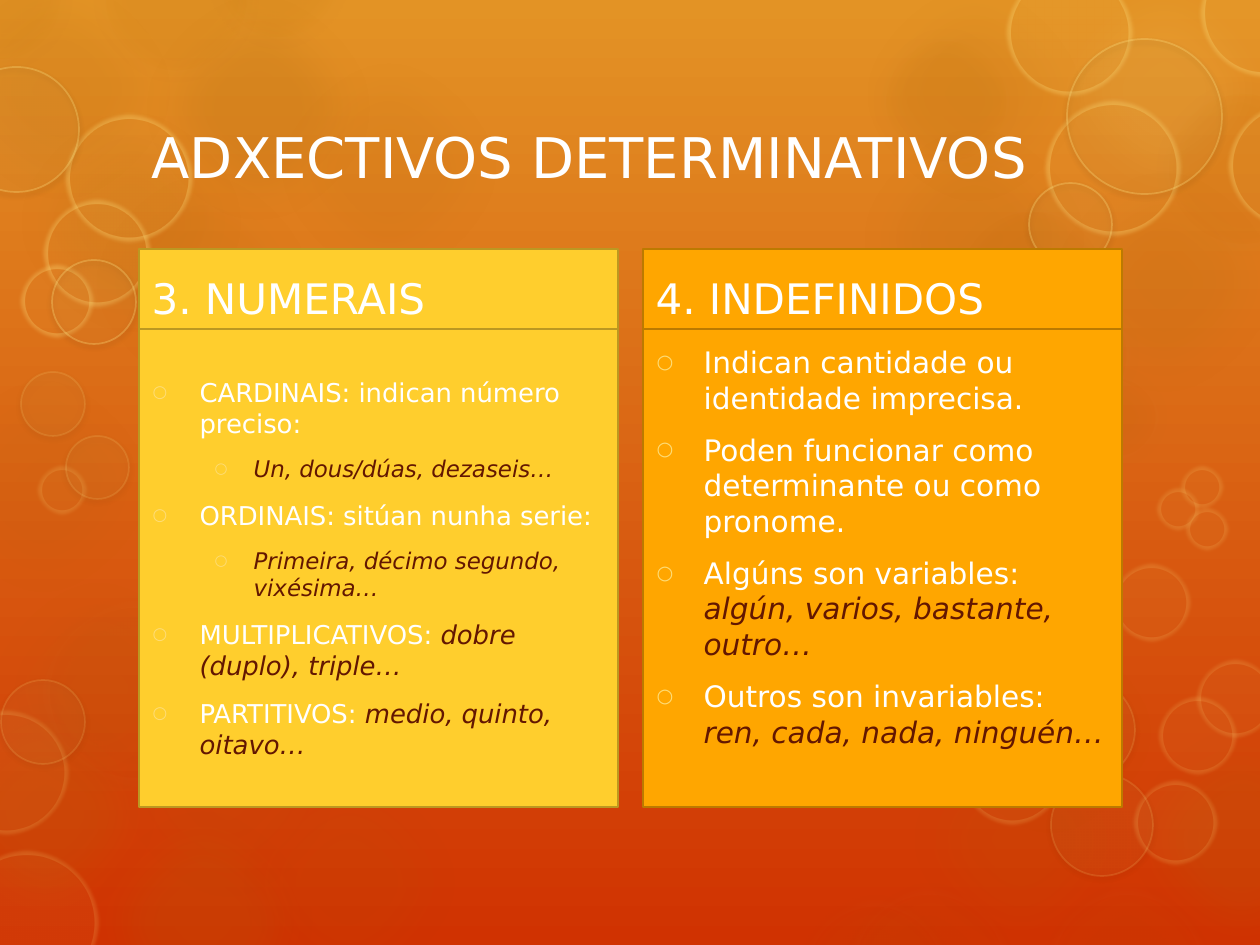
from lxml import etree
from pptx import Presentation, util as u
from pptx.dml.color import RGBColor
from pptx.enum import shapes, text
from pptx.oxml import ns

SCALE = 914400 / 126
WIDTH, HEIGHT = 1260, 945
FONT = "DejaVu Sans"
SKY = RGBColor(0xE3, 0x93, 0x25)
GROUND = RGBColor(0xD0, 0x32, 0x01)
BROWN = RGBColor(0xAE, 0x6D, 0x11)
PEACH = RGBColor(0xF1, 0xBD, 0x74)
CREAM = RGBColor(0xFF, 0xE2, 0x81)
WHITE = RGBColor(0xFF, 0xFF, 0xFF)
MAROON = RGBColor(0x63, 0x17, 0x01)
BULLET = RGBColor(0xFE, 0xDD, 0x78)
YELLOW = RGBColor(0xFF, 0xCE, 0x2D)
YELLOW_EDGE = RGBColor(0xBC, 0x98, 0x21)
ORANGE = RGBColor(0xFF, 0xA6, 0x00)
ORANGE_EDGE = RGBColor(0xBC, 0x7A, 0x00)

CLOUDS = [
    (-32, 557, 263, 8), (72, 151, 263, 10), (258, 39, 263, 10), (72, 790, 263, 16),
    (-70, -41, 263, 14), (127, -23, 263, 20), (0, 91, 263, 15), (843, -37, 263, 10),
    (1033, 151, 263, 15), (1110, 708, 263, 16), (919, 601, 263, 5), (-86, 682, 263, 16),
    (97, 660, 263, 8), (843, 108, 263, 15), (890, 708, 263, 10), (218, 751, 263, 8),
    (-88, 355, 263, 8), (851, 330, 168, 10),
]
GLOWS = [
    (1157, 82, 173), (874, 29, 144), (948, 200, 168), (994, 282, 144),
    (1067, 367, 100), (94, -82, 164), (207, -93, 142), (-72, -73, 144),
]
FAINT_GLOWS = [(38, 596, 193), (796, 895, 158), (843, 883, 173), (1042, 883, 170)]
BRIGHT_HAZES = [
    (66, 115, 126), (44, 200, 106), (21, 265, 72), (1007, -30, 125),
    (1201, -50, 126), (1229, 103, 125), (1046, 101, 134),
]
FAINT_HAZES = [
    (-45, 851, 143), (-55, 711, 123), (961, 722, 102), (1134, 781, 83),
    (1113, 564, 77), (1159, 697, 77), (1197, 660, 77), (1181, 466, 42),
    (1157, 488, 42), (1186, 508, 42), (38, 466, 48),
]
BRIGHT_RINGS = [(-46, 67, 125), (52, 260, 84), (1067, 39, 155), (1029, 183, 83)]
FAINT_RINGS = [(1, 680, 84), (1051, 774, 102), (1033, 679, 102), (21, 372, 64), (66, 436, 63)]

NUMERALS = [
    (0, "CARDINAIS: indican número preciso:", ""),
    (1, "", "Un, dous/dúas, dezaseis…"),
    (0, "ORDINAIS: sitúan nunha serie:", ""),
    (1, "", "Primeira, décimo segundo, vixésima…"),
    (0, "MULTIPLICATIVOS:", " dobre (duplo), triple…"),
    (0, "PARTITIVOS:", " medio, quinto, oitavo…"),
]
INDEFINITES = [
    (0, "Indican cantidade ou identidade imprecisa.", ""),
    (0, "Poden funcionar como determinante ou como pronome.", ""),
    (0, "Algúns son variables: ", "algún, varios, bastante, outro…"),
    (0, "Outros son invariables: ", "ren, cada, nada, ninguén…"),
]


def px(value):
    return round(value * SCALE)


def add_child(parent, tag, **attributes):
    values = {name: str(value) for name, value in attributes.items()}
    return etree.SubElement(parent, ns.qn(tag), values)


def place(shape, box):
    shape.left, shape.top, shape.width, shape.height = map(px, box)


def add_bubble(slide, circle, color, opacity, line=None, soft=0):
    left, top, size = map(px, circle)
    shape = slide.shapes.add_shape(shapes.MSO_SHAPE.OVAL, left, top, size, size)
    shape.fill.solid()
    shape.fill.fore_color.rgb = color
    opacities = [opacity]
    if line:
        line_color, line_width, line_opacity = line
        shape.line.color.rgb = line_color
        shape.line.width = u.Pt(line_width)
        opacities.append(line_opacity)
    else:
        shape.line.fill.background()
    properties = shape.element.spPr
    for element, percent in zip(list(properties.iter(ns.qn("a:srgbClr"))), opacities):
        add_child(element, "a:alpha", val=percent * 1000)
    shape.shadow.inherit = False
    effects = properties.find(ns.qn("a:effectLst"))
    if soft:
        add_child(effects, "a:softEdge", rad=u.Pt(soft))
    else:
        shadow = add_child(effects, "a:outerShdw", blurRad=u.Pt(3.1), dist=u.Pt(1.6),
                           dir=5400000, rotWithShape=0)
        add_child(add_child(shadow, "a:srgbClr", val="000000"), "a:alpha", val=38000)


def add_bubbles(slide):
    for *circle, opacity in CLOUDS:
        add_bubble(slide, circle, BROWN, opacity, soft=25)
    add_bubble(slide, (1033, -41, 263), CREAM, 10, soft=25)
    for circles, opacity, line_opacity in ((GLOWS, 10, 6), (FAINT_GLOWS, 6, 4)):
        for circle in circles:
            add_bubble(slide, circle, BROWN, opacity, (PEACH, 14, line_opacity), soft=12)
    for circles, width, line_opacity, soft in (
            (BRIGHT_HAZES, 5, 30, 2.5), (FAINT_HAZES, 5, 15, 2.5),
            (BRIGHT_RINGS, 1, 30, 0), (FAINT_RINGS, 1, 15, 0)):
        for circle in circles:
            add_bubble(slide, circle, CREAM, 5, (CREAM, width, line_opacity), soft)


def format_run(run, size, color=WHITE, italic=False):
    run.font.name = FONT
    run.font.size = u.Pt(size)
    run.font.bold = False
    run.font.italic = italic
    run.font.color.rgb = color


def fill_heading(shape, box, words, size, anchor):
    place(shape, box)
    frame = shape.text_frame
    frame.text = words
    frame.auto_size = text.MSO_AUTO_SIZE.NONE
    frame.vertical_anchor = anchor
    paragraph = frame.paragraphs[0]
    paragraph.alignment = text.PP_ALIGN.LEFT
    paragraph.space_before = u.Pt(0)
    format_run(paragraph.runs[0], size)


def add_bullet(paragraph, level):
    paragraph.level = level
    margin, indent = ((48, -47), (102, -39))[level]
    properties = paragraph._p.get_or_add_pPr()
    properties.set("marL", str(px(margin)))
    properties.set("indent", str(px(indent)))
    add_child(add_child(properties, "a:buClr"), "a:srgbClr", val=BULLET)
    add_child(properties, "a:buSzPct", val=65000)
    add_child(properties, "a:buFont", typeface=FONT)
    add_child(properties, "a:buChar", char="○")


def fill_list(shape, box, items, sizes):
    place(shape, box)
    frame = shape.text_frame
    frame.auto_size = text.MSO_AUTO_SIZE.NONE
    frame.vertical_anchor = text.MSO_ANCHOR.MIDDLE
    for index, (level, plain, example) in enumerate(items):
        paragraph = frame.add_paragraph() if index else frame.paragraphs[0]
        add_bullet(paragraph, level)
        paragraph.space_before = u.Pt((3.6, 3.2)[level] if index else 0)
        paragraph.space_after = u.Pt(6)
        for words, color, italic in ((plain, WHITE, False), (example, MAROON, True)):
            if words:
                run = paragraph.add_run()
                run.text = words
                format_run(run, sizes[level], color, italic)


def fill_panel(header, body, box, heading, items, sizes, fill, edge):
    left, top, width, height = box
    header_height = 80
    fill_heading(header, (left, top, width, header_height), heading, 24, text.MSO_ANCHOR.BOTTOM)
    fill_list(body, (left, top + header_height, width, height - header_height), items, sizes)
    for shape in (header, body):
        shape.fill.solid()
        shape.fill.fore_color.rgb = fill
        shape.line.color.rgb = edge
        shape.line.width = u.Pt(1.5)


def main():
    presentation = Presentation()
    presentation.slide_width, presentation.slide_height = px(WIDTH), px(HEIGHT)
    slide = presentation.slides.add_slide(presentation.slide_layouts[4])
    background = slide.background.fill
    background.gradient()
    background.gradient_angle = 270
    for stop, color, position in zip(background.gradient_stops, (SKY, GROUND), (0, 1)):
        stop.color.rgb = color
        stop.position = position
    placeholders = list(slide.placeholders)
    title, left_header, left_body, right_header, right_body = placeholders
    add_bubbles(slide)
    for shape in placeholders:
        slide.shapes.element.append(shape.element)
    fill_heading(title, (139, 93, 982, 127), "ADXECTIVOS DETERMINATIVOS", 32,
                 text.MSO_ANCHOR.MIDDLE)
    fill_panel(left_header, left_body, (139, 249, 479, 558), "3. NUMERAIS",
               NUMERALS, (14.8, 13.1), YELLOW, YELLOW_EDGE)
    fill_panel(right_header, right_body, (643, 249, 479, 558), "4. INDEFINIDOS",
               INDEFINITES, (16.9, 16.9), ORANGE, ORANGE_EDGE)
    right_body.text_frame.vertical_anchor = text.MSO_ANCHOR.TOP
    right_body.text_frame.margin_top = px(15)
    presentation.save("out.pptx")


if __name__ == "__main__":
    main()
